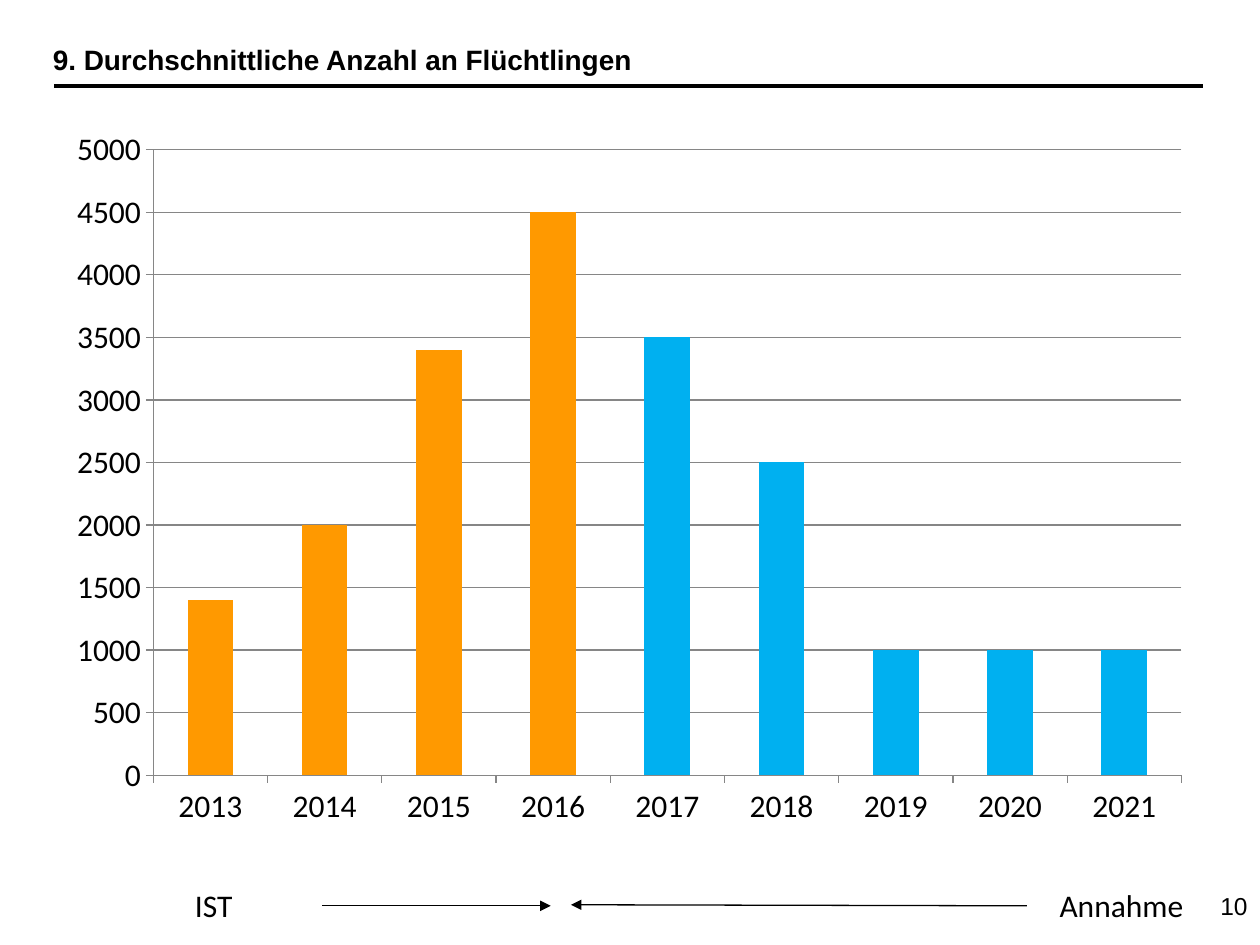
from dataclasses import dataclass

from lxml.etree import SubElement
from pptx import Presentation
from pptx.chart.data import CategoryChartData
from pptx.dml.color import RGBColor
from pptx.enum.chart import XL_CHART_TYPE as ChartType, XL_TICK_MARK as TickMark
from pptx.enum.shapes import MSO_CONNECTOR as Connector
from pptx.enum.text import MSO_ANCHOR as Anchor, PP_ALIGN as Align
from pptx.oxml.ns import qn
from pptx.util import Cm, Pt


@dataclass(frozen=True)
class Theme:
    text: RGBColor = RGBColor(0x00, 0x00, 0x00)
    grid: RGBColor = RGBColor(0x86, 0x86, 0x86)
    actual: RGBColor = RGBColor(0xFF, 0x99, 0x00)
    forecast: RGBColor = RGBColor(0x00, 0xB0, 0xF0)
    heading_font: str = "Arial"
    body_font: str = "Calibri"
    title_size: float = 16
    body_size: float = 18
    number_size: float = 14


@dataclass(frozen=True)
class Box:
    left: float
    top: float
    width: float
    height: float

    def lengths(self) -> tuple:
        return Cm(self.left), Cm(self.top), Cm(self.width), Cm(self.height)


@dataclass(frozen=True)
class Label:
    text: str
    box: Box
    font: str
    size: float
    align: Align = Align.LEFT
    anchor: Anchor = Anchor.TOP
    bold: bool = False


@dataclass(frozen=True)
class Line:
    start: tuple[float, float]
    end: tuple[float, float]
    weight: float
    arrow: bool = False


THEME = Theme()
TITLE = Label("9. Durchschnittliche Anzahl an Flüchtlingen", Box(0.81, 0.74, 23.01, 0.99),
              THEME.heading_font, THEME.title_size, bold=True)
LABELS = [
    Label("10", Box(24.28, 17.73, 1.12, 1.04), THEME.heading_font, THEME.number_size,
          Align.RIGHT, Anchor.MIDDLE),
    Label("IST", Box(3.68, 17.73, 1.45, 1.02), THEME.body_font, THEME.body_size),
    Label("Annahme", Box(21.11, 17.73, 3.2, 1.02), THEME.body_font, THEME.body_size),
]
LINES = [
    Line((1.09, 1.73), (24.26, 1.73), 2.25),
    Line((6.5, 18.26), (11.1, 18.26), 0.75, arrow=True),
    Line((20.7, 18.26), (11.51, 18.24), 0.75, arrow=True),
]
CHART_BOX = Box(1.09, 2.34, 23.19, 14.6)
FIRST_YEAR = 2013
FIRST_FORECAST_YEAR = 2017
REFUGEES = [1400, 2000, 3400, 4500, 3500, 2500, 1000, 1000, 1000]


def write_label(shape, label: Label) -> None:
    frame = shape.text_frame
    frame.word_wrap = True
    frame.vertical_anchor = label.anchor
    paragraph = frame.paragraphs[0]
    paragraph.alignment = label.align
    run = paragraph.add_run()
    run.text = label.text
    font = run.font
    font.name, font.size, font.bold = label.font, Pt(label.size), label.bold
    font.color.rgb = THEME.text


def add_label(slide, label: Label) -> None:
    write_label(slide.shapes.add_textbox(*label.box.lengths()), label)


def place_title(slide, label: Label) -> None:
    title = slide.shapes.title
    title.left, title.top, title.width, title.height = label.box.lengths()
    write_label(title, label)


def add_line(slide, line: Line) -> None:
    ends = [Cm(value) for value in (*line.start, *line.end)]
    connector = slide.shapes.add_connector(Connector.STRAIGHT, *ends)
    connector.line.width = Pt(line.weight)
    connector.line.color.rgb = THEME.text
    properties = connector.element.spPr
    if line.arrow:
        SubElement(properties.find(qn("a:ln")), qn("a:tailEnd"), type="triangle")
    SubElement(properties, qn("a:effectLst"))


def add_refugee_chart(slide) -> None:
    years = [FIRST_YEAR + index for index in range(len(REFUGEES))]
    data = CategoryChartData()
    data.categories = [str(year) for year in years]
    data.add_series("Series 1", REFUGEES)
    chart = slide.shapes.add_chart(
        ChartType.COLUMN_CLUSTERED, *CHART_BOX.lengths(), data).chart
    chart.has_title = chart.has_legend = False
    chart.font.name, chart.font.size = THEME.body_font, Pt(THEME.body_size)
    chart.font.color.rgb = THEME.text

    value_axis, category_axis = chart.value_axis, chart.category_axis
    value_axis.minimum_scale, value_axis.maximum_scale = 0, 5000
    value_axis.major_unit = 500
    value_axis.has_major_gridlines = True
    for axis in (value_axis, category_axis):
        axis.major_tick_mark = TickMark.OUTSIDE
        axis.minor_tick_mark = TickMark.NONE
    for outline in (value_axis.format.line, category_axis.format.line,
                    value_axis.major_gridlines.format.line):
        outline.color.rgb = THEME.grid
        outline.width = Pt(0.75)

    plot = chart.plots[0]
    plot.gap_width = 150
    plot.vary_by_categories = False
    series = plot.series[0]
    series.format.fill.solid()
    series.format.fill.fore_color.rgb = THEME.actual
    for index, year in enumerate(years):
        if year >= FIRST_FORECAST_YEAR:
            fill = series.points[index].format.fill
            fill.solid()
            fill.fore_color.rgb = THEME.forecast


def main() -> None:
    presentation = Presentation()
    presentation.slide_width, presentation.slide_height = Cm(25.4), Cm(19.05)
    title_only = presentation.slide_layouts.get_by_name("Title Only")
    slide = presentation.slides.add_slide(title_only)
    place_title(slide, TITLE)
    add_refugee_chart(slide)
    for line in LINES:
        add_line(slide, line)
    for label in LABELS:
        add_label(slide, label)
    presentation.save("out.pptx")


if __name__ == "__main__":
    main()
